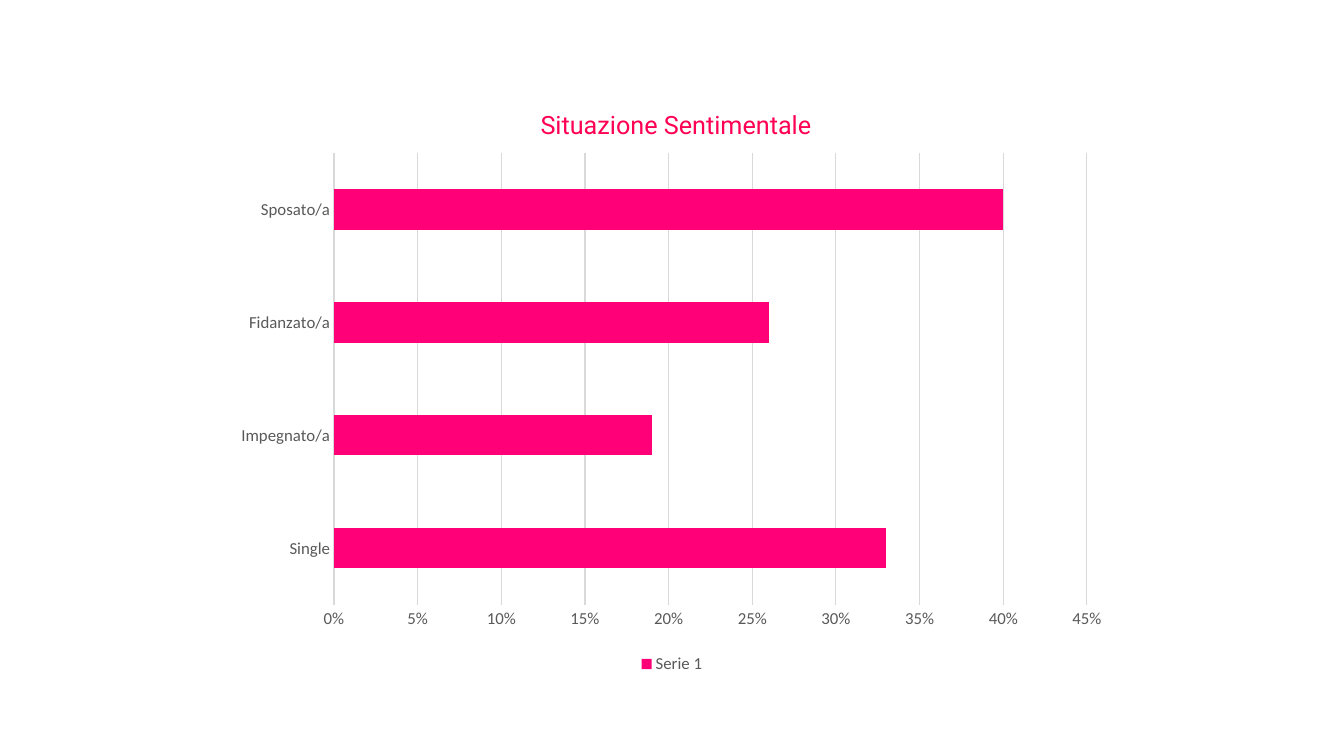
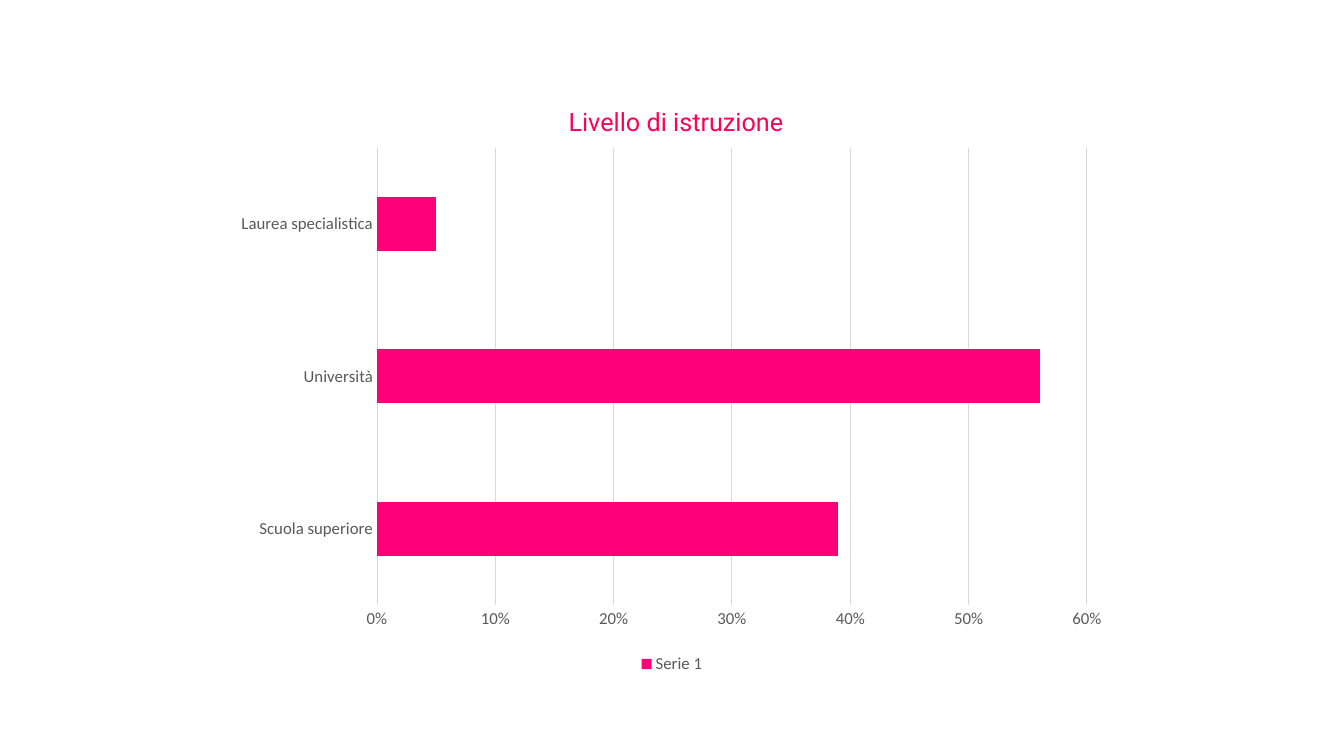
"""Build two survey slides, each with one horizontal bar chart."""
from dataclasses import dataclass

from pptx import Presentation
from pptx import util as u
from pptx.chart.data import CategoryChartData
from pptx.dml.color import RGBColor
from pptx.enum import chart as ch
from pptx.oxml import parse_xml
from pptx.oxml.ns import nsdecls, qn

PX = 12192000 // 1344
SLIDE = (1344, 756)
FRAME = (224, 80, 896, 598)
PLOT_RIGHT, PLOT_BOTTOM = 1087, 605

CHARTS = [
    dict(
        title="Situazione Sentimentale",
        title_at=(536, 104),
        plot_at=(334, 153),
        values={"Single": 0.33, "Impegnato/a": 0.19, "Fidanzato/a": 0.26, "Sposato/a": 0.4},
        scale=dict(minimum_scale=0, maximum_scale=0.45, major_unit=0.05),
    ),
    dict(
        title="Livello di istruzione",
        title_at=(564, 101),
        plot_at=(377, 148),
        values={"Scuola superiore": 0.39, "Università": 0.56, "Laurea specialistica": 0.05},
        scale=dict(minimum_scale=0, maximum_scale=0.6, major_unit=0.1),
    ),
]


@dataclass(frozen=True)
class Theme:
    title: tuple = ("Roboto", 18, "FF0054")
    label: tuple = ("Calibri", 12, "595959")
    base: tuple = ("Calibri", 10, "000000")
    bar: str = "FF0078"
    rule: str = "D9D9D9"
    rule_width: float = 0.75
    gap: int = 182


THEME = Theme()


def set_attrs(obj, values):
    for name, value in values.items():
        setattr(obj, name, value)


def style_font(font, style):
    name, size, color = style
    set_attrs(font, dict(name=name, size=u.Pt(size), bold=False))
    font.color.rgb = RGBColor.from_string(color)


def style_line(line):
    line.width = u.Pt(THEME.rule_width)
    line.color.rgb = RGBColor.from_string(THEME.rule)


def place(element, index, at, size=None):
    left, top, width, height = FRAME
    values = dict(x=(at[0] - left) / width, y=(at[1] - top) / height)
    if size:
        values.update(w=size[0] / width, h=size[1] / height)
    target = '<c:layoutTarget val="inner"/>' if size else ""
    modes = "".join(f'<c:{key}Mode val="edge"/>' for key in "xy")
    parts = "".join(f'<c:{key} val="{value:.4f}"/>' for key, value in values.items())
    for old in element.findall(qn("c:layout")):
        element.remove(old)
    element.insert(index, parse_xml(
        f'<c:layout {nsdecls("c")}><c:manualLayout>{target}{modes}{parts}'
        "</c:manualLayout></c:layout>"))


def add_title(chart, content):
    chart.has_title = True
    title = chart.chart_title
    title.include_in_layout = False
    r = title.text_frame.paragraphs[0].add_run()
    r.text = content["title"]
    style_font(r.font, THEME.title)
    place(title._element, 1, content["title_at"])


def style_axes(chart, scale):
    for axis in (chart.category_axis, chart.value_axis):
        set_attrs(axis, dict(major_tick_mark=ch.XL_TICK_MARK.NONE,
                             minor_tick_mark=ch.XL_TICK_MARK.NONE))
        style_font(axis.tick_labels.font, THEME.label)
    style_line(chart.category_axis.format.line)
    axis = chart.value_axis
    set_attrs(axis, dict(scale, has_major_gridlines=True))
    set_attrs(axis.tick_labels, dict(number_format="0%", number_format_is_linked=False))
    axis.format.line.fill.background()
    style_line(axis.major_gridlines.format.line)


def add_bar_chart(s, content):
    data = CategoryChartData(number_format="0%")
    data.categories = list(content["values"])
    data.add_series("Serie 1", list(content["values"].values()))
    chart = s.shapes.add_chart(
        ch.XL_CHART_TYPE.BAR_CLUSTERED, *(v * PX for v in FRAME), data).chart
    style_font(chart.font, THEME.base)
    add_title(chart, content)
    style_axes(chart, content["scale"])

    plot = chart.plots[0]
    set_attrs(plot, dict(gap_width=THEME.gap, vary_by_categories=False))
    fill = plot.series[0].format.fill
    fill.solid()
    fill.fore_color.rgb = RGBColor.from_string(THEME.bar)

    chart.has_legend = True
    set_attrs(chart.legend, dict(position=ch.XL_LEGEND_POSITION.BOTTOM,
                                 include_in_layout=False))
    style_font(chart.legend.font, THEME.label)

    left, top = content["plot_at"]
    place(chart._chartSpace.chart.plotArea, 0, (left, top),
          (PLOT_RIGHT - left, PLOT_BOTTOM - top))


def main():
    prs = Presentation()
    set_attrs(prs, dict(slide_width=SLIDE[0] * PX, slide_height=SLIDE[1] * PX))
    for content in CHARTS:
        add_bar_chart(prs.slides.add_slide(prs.slide_layouts[6]), content)
    prs.save("out.pptx")


if __name__ == "__main__":
    main()
